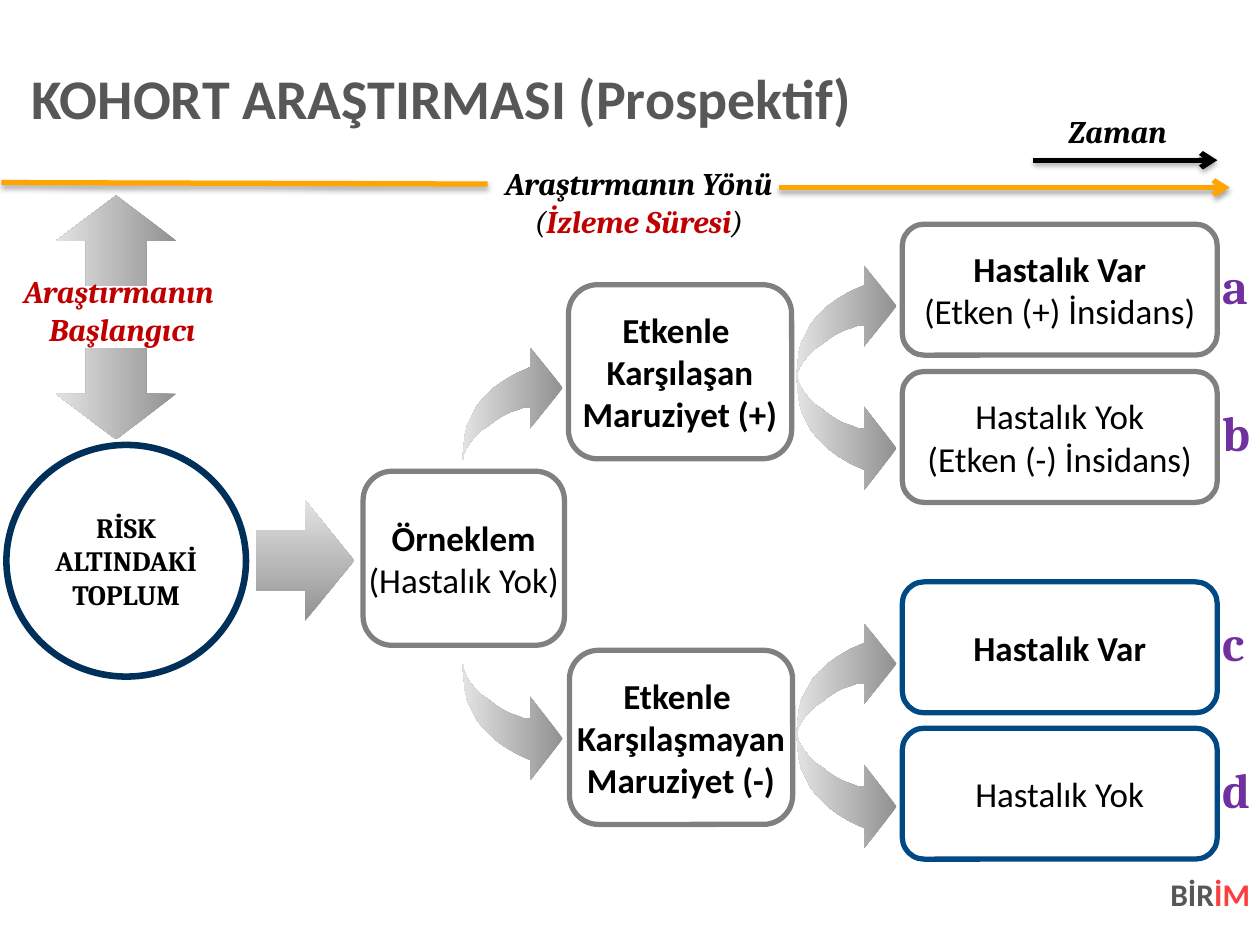
"""Build the cohort study flow slide."""
from lxml.etree import SubElement
from pptx import Presentation
from pptx.dml.color import RGBColor
from pptx.enum.shapes import MSO_CONNECTOR as Connector, MSO_SHAPE as Preset
from pptx.enum.text import MSO_ANCHOR as Anchor, PP_ALIGN as Align
from pptx.oxml.ns import qn
from pptx.util import Cm, Pt

BLACK, GRAY, BLUE, NAVY = "000000", "808080", "004985", "003059"
ORANGE, RED, PURPLE, DARK = "FEA501", "C00000", "7030A0", "575757"

BOX = {"size": Pt(20), "name": "Calibri", "bold": False, "color": BLACK}
BOLD = {"bold": True}
LABEL = {"size": Pt(18), "name": "Cambria", "bold": True, "italic": True, "color": BLACK}
CIRCLE = {"size": Pt(16), "name": "Cambria", "bold": True, "color": BLACK}
LETTER = {"size": Pt(28), "name": "Cambria", "bold": True, "color": PURPLE}
TITLE = {"size": Pt(32), "name": "Calibri", "bold": True, "color": DARK}
FOOTER = TITLE | {"size": Pt(18)}

OUTCOME_LEFT, OUTCOME_SIZE = 18.19, (6.35, 2.64)
OUTCOMES = [
    ("a", 4.52, GRAY, [[("Hastalık Var", BOLD)], [("(Etken (+) İnsidans)", {})]]),
    ("b", 7.49, GRAY, [[("Hastalık Yok", {})], [("(Etken (-) İnsidans)", {})]]),
    ("c", 11.73, BLUE, [[("Hastalık Var", BOLD)]]),
    ("d", 14.68, BLUE, [[("Hastalık Yok", {})]]),
]
GROUPS = [
    ((11.46, 5.74, 4.5, 3.51), [[("Etkenle ", BOLD)], [("Karşılaşan", BOLD)], [("Maruziyet (+)", BOLD)]]),
    ((11.48, 13.11, 4.5, 3.51), [[("Etkenle ", BOLD)], [("Karşılaşmayan", BOLD)], [("Maruziyet (-)", BOLD)]]),
    ((7.32, 9.5, 4.06, 3.51), [[("Örneklem", BOLD)], [("(Hastalık Yok)", {})]]),
]
LABELS = [
    ((9.45, 3.18, 6.86, 1.8), [[("Araştırmanın Yönü", {})],
                               [("(", {"bold": False}), ("İzleme Süresi", {"color": RED}), (")", {"bold": False})]]),
    ((0.18, 5.36, 4.57, 1.8), [[("Araştırmanın ", {"color": RED})], [("Başlangıcı", {"color": RED})]]),
    ((20.83, 2.13, 3.4, 1.02), [[("Zaman", {})]]),
]
BLOCK_ARROWS = [
    ((1.12, 7.01, 2.44, 1.85), 0, 180),
    ((1.12, 3.94, 2.44, 1.83), 180, 0),
    ((4.93, 10.31, 2.44, 1.98), 270, 0),
]
CURVED_ARROWS = [(9.32, 9.27, -2.26), (9.32, 13.39, 2.34), (16.05, 7.62, -2.26),
                 (16.05, 7.54, 2.34), (16.05, 14.83, -2.26), (16.05, 14.76, 2.34)]
CURVE_WIDTH, CURVE_GRID = 2.03, (80, 92)
CURVE = [(0, 0), (1, 10), (2, 20), (4, 29), (8, 37), (12, 45), (18, 52), (25, 59), (33, 65),
         (43, 71), (54, 76), (54, 92), (80, 59), (54, 26), (54, 43), (49, 43), (44, 41),
         (38, 39), (32, 36), (26, 32), (21, 28), (15, 24), (10, 19), (6, 14), (3, 9), (1, 4), (1, 0)]
TIME_LINES = [
    ((15.7, 3.78, 24.79, 3.78), ORANGE, True),
    ((0.03, 3.68, 9.83, 3.71), ORANGE, False),
    ((20.83, 3.23, 24.54, 3.23), BLACK, True),
]


def color(value):
    return RGBColor.from_string(value)


def lengths(values):
    return [Cm(value) for value in values]


def write(shape, paragraphs, style, align=Align.CENTER, wrap=True, **frame_format):
    frame = shape.text_frame
    for name, value in ({"word_wrap": wrap} | frame_format).items():
        setattr(frame, name, value)
    for index, runs in enumerate(paragraphs):
        paragraph = frame.add_paragraph() if index else frame.paragraphs[0]
        paragraph.alignment = align
        for text, changes in runs:
            run = paragraph.add_run()
            run.text = text
            for name, value in (style | changes).items():
                if name == "color":
                    run.font.color.rgb = color(value)
                else:
                    setattr(run.font, name, value)


def add_text(slide, place, paragraphs, style, **options):
    shape = slide.shapes.add_textbox(*lengths(place))
    write(shape, paragraphs, style, **options)
    return shape


def add_outline(slide, preset, place, line_color, width, paragraphs, style, wrap):
    shape = slide.shapes.add_shape(preset, *lengths(place))
    shape.shadow.inherit = False
    shape.fill.background()
    shape.line.color.rgb = color(line_color)
    shape.line.width = Pt(width)
    write(shape, paragraphs, style, wrap=wrap, vertical_anchor=Anchor.MIDDLE)


def shade(shape, angle):
    shape.shadow.inherit = False
    shape.line.fill.background()
    shape.fill.gradient()
    shape.fill.gradient_angle = angle
    for position, (stop, value) in enumerate(zip(shape.fill.gradient_stops, ("919191", "E3E3E3"))):
        stop.color.rgb = color(value)
        stop.position = position


def add_curved_arrow(slide, left, start, height):
    columns, rows = CURVE_GRID
    sign = 1 if height > 0 else -1
    scale = (Cm(CURVE_WIDTH) / columns, Cm(abs(height)) / rows)
    builder = slide.shapes.build_freeform(0, 0, scale=scale)
    builder.add_line_segments([(x, sign * y) for x, y in CURVE[1:]], close=True)
    shade(builder.convert_to_shape(Cm(left), Cm(start)), 180)


def add_time_line(slide, ends, line_color, arrow):
    line = slide.shapes.add_connector(Connector.STRAIGHT, *lengths(ends))
    line.line.color.rgb = color(line_color)
    line.line.width = Pt(3)
    properties = line._element.spPr
    if arrow:
        SubElement(properties.find(qn("a:ln")), qn("a:tailEnd"), type="arrow")
    effects = SubElement(properties, qn("a:effectLst"))
    shadow = SubElement(effects, qn("a:outerShdw"), blurRad=str(Pt(3.1)), dist=str(Pt(1.8)),
                        dir="5400000", rotWithShape="0")
    shadow_color = SubElement(shadow, qn("a:srgbClr"), val=BLACK)
    SubElement(shadow_color, qn("a:alpha"), val="35000")


def main():
    presentation = Presentation()
    presentation.slide_width, presentation.slide_height = Cm(25.4), Cm(19.05)
    slide = presentation.slides.add_slide(presentation.slide_layouts[6])

    title = add_text(slide, (0.64, 1.14, 24.49, 1.8), [[("KOHORT ARAŞTIRMASI (Prospektif)", {})]], TITLE,
                     align=Align.LEFT, vertical_anchor=Anchor.MIDDLE, margin_left=0, margin_right=0)
    title.text_frame.paragraphs[0].line_spacing = 0.9

    for place, rotation, angle in BLOCK_ARROWS:
        arrow = slide.shapes.add_shape(Preset.DOWN_ARROW, *lengths(place))
        arrow.rotation = rotation
        shade(arrow, angle)
    for curve in CURVED_ARROWS:
        add_curved_arrow(slide, *curve)
    for time_line in TIME_LINES:
        add_time_line(slide, *time_line)

    add_outline(slide, Preset.OVAL, (0.13, 8.97, 4.83, 4.67), NAVY, 3.75,
                [[("RİSK ALTINDAKİ TOPLUM", {})]], CIRCLE, True)
    for place, paragraphs in GROUPS:
        add_outline(slide, Preset.ROUNDED_RECTANGLE, place, GRAY, 3, paragraphs, BOX, False)
    for letter, top, line_color, paragraphs in OUTCOMES:
        add_outline(slide, Preset.ROUNDED_RECTANGLE, (OUTCOME_LEFT, top, *OUTCOME_SIZE),
                    line_color, 3, paragraphs, BOX, False)
        add_text(slide, (24.39, top + 0.5, 1.19, 1.45), [[(letter, {})]], LETTER, align=Align.LEFT)
    for place, paragraphs in LABELS:
        add_text(slide, place, paragraphs, LABEL)
    add_text(slide, (23.37, 17.63, 1.83, 1.42), [[("BİR", {}), ("İM", {"color": "FB3E3E"})]], FOOTER,
             align=Align.RIGHT, margin_left=0, margin_right=0, margin_top=0, margin_bottom=0)
    presentation.save("out.pptx")


if __name__ == "__main__":
    main()
